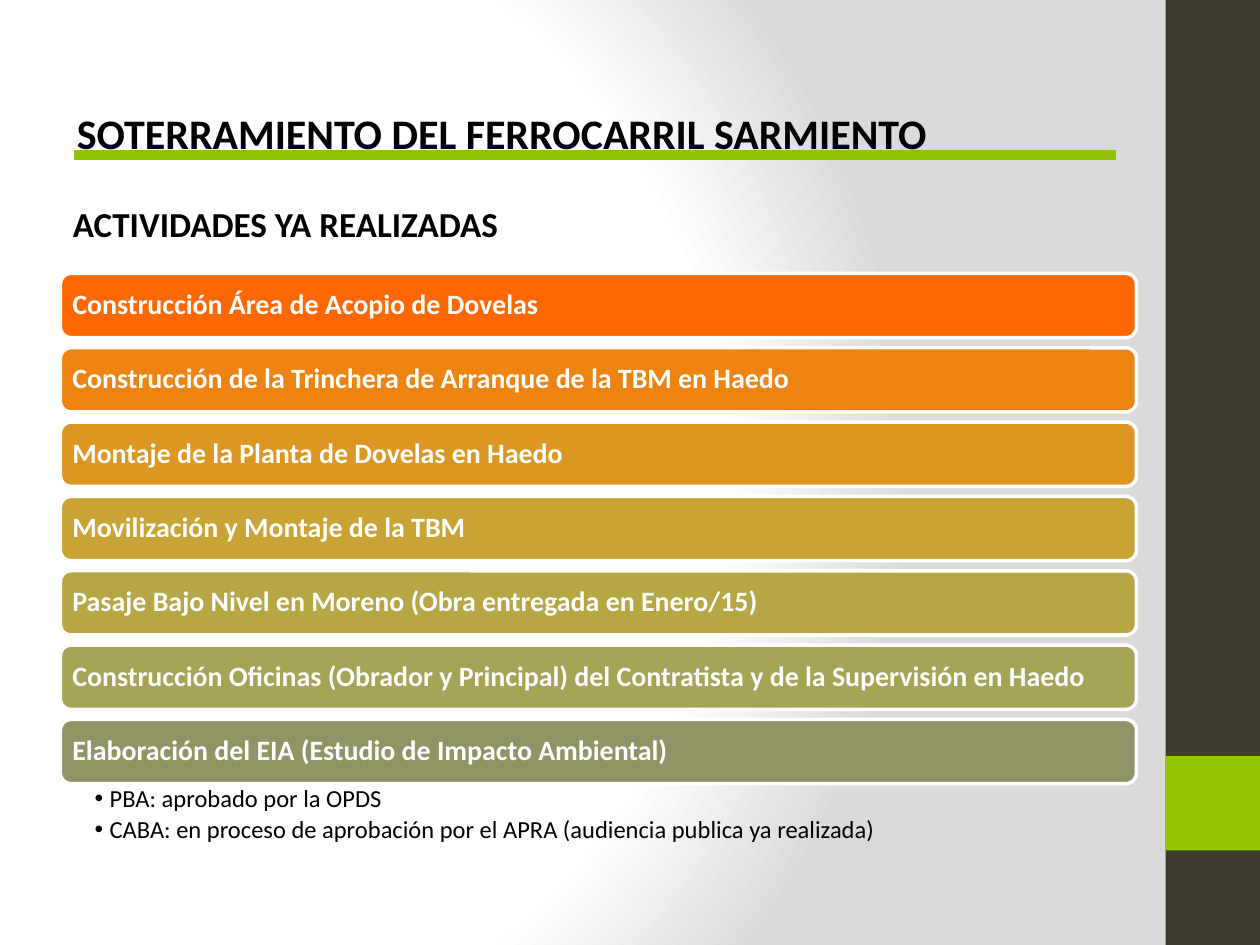
from dataclasses import dataclass

import lxml.etree
import pptx
import pptx.dml.color
import pptx.enum.shapes
import pptx.enum.text
import pptx.oxml
import pptx.oxml.ns
import pptx.util

Inches = pptx.util.Inches
Pt = pptx.util.Pt
RGB = pptx.dml.color.RGBColor
Shape = pptx.enum.shapes.MSO_SHAPE
Anchor = pptx.enum.text.MSO_ANCHOR
Align = pptx.enum.text.PP_ALIGN
qn = pptx.oxml.ns.qn

FONT = "Calibri"
BLACK = RGB(0x00, 0x00, 0x00)
WHITE = RGB(0xFF, 0xFF, 0xFF)
DARK = RGB(0x3E, 0x3D, 0x2D)
GREEN = RGB(0x94, 0xC6, 0x00)
RULE = RGB(0x91, 0xC2, 0x00)

LEFT, TOP, WIDTH, HEIGHT, STEP = 0.48, 2.17, 8.54, 0.51, 0.59

BACK = f"""<p:bg {pptx.oxml.ns.nsdecls("p", "a")}><p:bgPr>
<a:gradFill rotWithShape="1"><a:gsLst>
<a:gs pos="0"><a:srgbClr val="FFFFFF"/></a:gs>
<a:gs pos="75000"><a:srgbClr val="FFFFFF"/></a:gs>
<a:gs pos="100000"><a:srgbClr val="DADADA"/></a:gs>
</a:gsLst><a:path path="circle">
<a:fillToRect l="20000" t="50000" r="100000" b="50000"/>
</a:path></a:gradFill><a:effectLst/></p:bgPr></p:bg>"""


@dataclass
class Task:
    text: str
    color: RGB


TASKS = [
    Task("Construcción Área de Acopio de Dovelas", RGB(0xFF, 0x67, 0x00)),
    Task("Construcción de la Trinchera de Arranque de la TBM en Haedo", RGB(0xED, 0x83, 0x11)),
    Task("Montaje de la Planta de Dovelas en Haedo", RGB(0xDB, 0x97, 0x22)),
    Task("Movilización y Montaje de la TBM", RGB(0xC9, 0xA3, 0x33)),
    Task("Pasaje Bajo Nivel en Moreno (Obra entregada en Enero/15)", RGB(0xB7, 0xA7, 0x44)),
    Task("Construcción Oficinas (Obrador y Principal) del Contratista y de la Supervisión en Haedo",
         RGB(0xA5, 0xA3, 0x55)),
    Task("Elaboración del EIA (Estudio de Impacto Ambiental)", RGB(0x90, 0x94, 0x65)),
]
NOTES = [
    "PBA: aprobado por la OPDS",
    "CABA: en proceso de aprobación por el APRA (audiencia publica ya realizada)",
]


def place(shape, left: float, top: float, width: float, height: float) -> None:
    shape.left, shape.top = Inches(left), Inches(top)
    shape.width, shape.height = Inches(width), Inches(height)


def pad(frame, left: float, top: float, right: float, bottom: float) -> None:
    frame.margin_left, frame.margin_top = Inches(left), Inches(top)
    frame.margin_right, frame.margin_bottom = Inches(right), Inches(bottom)


def style(para, size: int, color: RGB, bold: bool, space: float) -> None:
    para.alignment = Align.LEFT
    para.line_spacing = space
    font = para.font
    font.name, font.size, font.bold = FONT, Pt(size), bold
    font.color.rgb = color


def head(shape, text: str, size: int) -> None:
    frame = shape.text_frame
    frame.text = text
    frame.word_wrap = True
    frame.auto_size = pptx.enum.text.MSO_AUTO_SIZE.NONE
    frame.vertical_anchor = Anchor.TOP
    para = frame.paragraphs[0]
    style(para, size, BLACK, True, 1.5)
    para.space_before = para.space_after = Pt(6)


def block(slide, kind: Shape, box: tuple[float, ...], color: RGB):
    shape = slide.shapes.add_shape(kind, *map(Inches, box))
    shape.shadow.inherit = False
    shape.fill.solid()
    shape.fill.fore_color.rgb = color
    shape.line.fill.background()
    return shape


def bar(slide, task: Task, top: float) -> None:
    shape = block(slide, Shape.ROUNDED_RECTANGLE, (LEFT, top, WIDTH, HEIGHT), task.color)
    shape.line.color.rgb = WHITE
    shape.line.width = Pt(2)
    frame = shape.text_frame
    frame.text = task.text
    frame.word_wrap = True
    frame.vertical_anchor = Anchor.MIDDLE
    pad(frame, 0.07, 0.07, 0.07, 0.07)
    style(frame.paragraphs[0], 16, WHITE, True, 0.9)


def bullets(body) -> None:
    place(body, LEFT, TOP + STEP * 6 + HEIGHT, WIDTH, 0.52)
    frame = body.text_frame
    frame.text = "\n".join(NOTES)
    frame.auto_size = pptx.enum.text.MSO_AUTO_SIZE.NONE
    pad(frame, 0.27, 0.02, 0.11, 0.02)
    for para in frame.paragraphs:
        para.level = 1
        style(para, 14, BLACK, False, 0.9)
        para.space_before, para.space_after = Pt(0), Pt(2.8)
        props = para._p.get_or_add_pPr()
        props.set("marL", str(Inches(0.12)))
        props.set("indent", str(Inches(-0.12)))
        lxml.etree.SubElement(props, qn("a:buFont")).set("typeface", "Arial")
        lxml.etree.SubElement(props, qn("a:buChar")).set("char", "•")
        # Bullet marks must come before the default run properties.
        props.append(props.find(qn("a:defRPr")))


def rule(slide) -> None:
    line = slide.shapes.add_connector(
        pptx.enum.shapes.MSO_CONNECTOR.STRAIGHT,
        Inches(0.59), Inches(1.23), Inches(8.86), Inches(1.23))
    line.line.color.rgb = RULE
    line.line.width = Pt(6)
    lxml.etree.SubElement(line._element.spPr, qn("a:effectLst"))


def main() -> None:
    deck = pptx.Presentation()
    deck.slide_width, deck.slide_height = Inches(10), Inches(7.5)
    slide = deck.slides.add_slide(deck.slide_layouts[1])
    slide._element.cSld.insert(0, pptx.oxml.parse_xml(BACK))

    block(slide, Shape.RECTANGLE, (9.25, 0, 0.75, 7.5), DARK)
    block(slide, Shape.RECTANGLE, (9.25, 6, 0.75, 0.75), GREEN)
    for row, task in enumerate(TASKS):
        bar(slide, task, TOP + STEP * row)
    bullets(slide.placeholders[1])
    rule(slide)

    label = slide.shapes.add_textbox(0, 0, 0, 0)
    place(label, 0.48, 1.39, 8.82, 0.61)
    head(label, "ACTIVIDADES YA REALIZADAS", 20)

    title = slide.shapes.title
    place(title, 0.51, 0.6, 8.82, 0.64)
    head(title, "SOTERRAMIENTO DEL FERROCARRIL SARMIENTO", 24)
    # The title lies in front of the rule.
    title._element.getparent().append(title._element)

    deck.save("out.pptx")


if __name__ == "__main__":
    main()
